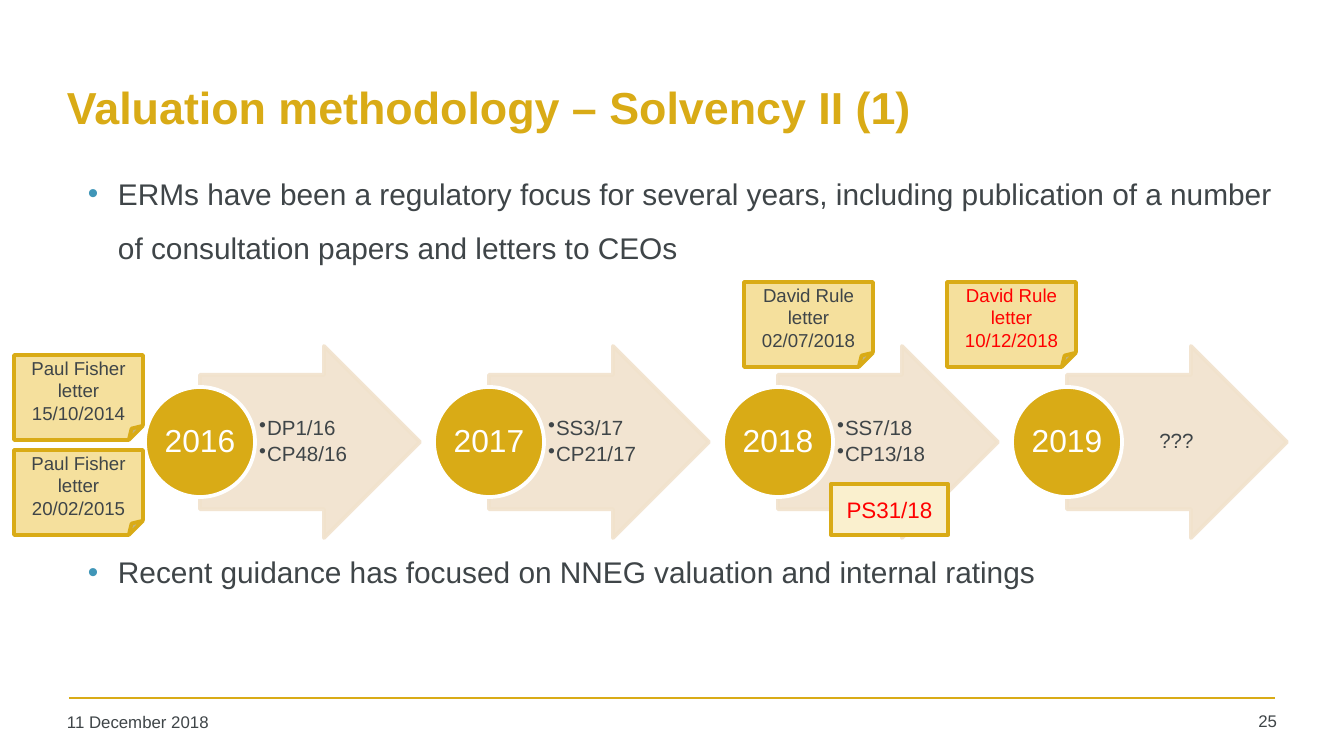
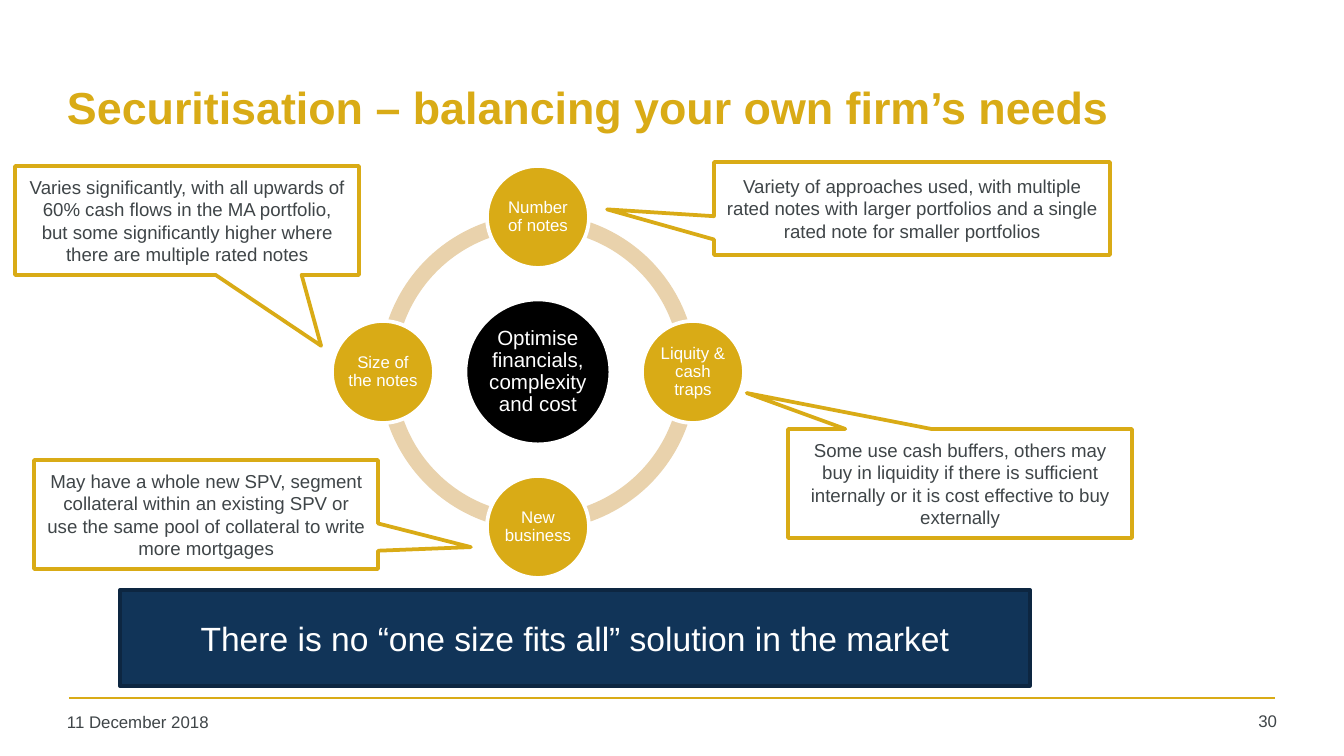
from lxml import etree
from pptx import Presentation
from pptx.dml.color import RGBColor
from pptx.enum.shapes import MSO_CONNECTOR as Line, MSO_SHAPE as Geo
from pptx.enum.text import MSO_ANCHOR as Anchor, MSO_AUTO_SIZE as Auto, PP_ALIGN as Align
from pptx.oxml.ns import qn
from pptx.util import Emu, Pt

# Shared look
SCALE = 914400 / 134.4
FONT = "Arial"
GOLD, INK, WHITE, RED = "D9AB16", "3F4548", "FFFFFF", "FF0000"
BLUE, NOTE, CREAM, SAND, TAN = "4096B8", "F5E09D", "FAF0CE", "F1E2CC", "E9D2AC"
NAVY, DEEP, BLACK = "113458", "0D2641", "000000"
DATE = "11 December 2018"
TIGHT, FRAME, ROOMY = (1, 1, 1, 1), (9, 5, 9, 5), (13, 7, 13, 7)

# Slide 1 content
FOCUS = {
    "title": "Valuation methodology – Solvency II (1)",
    "page": "25",
    "points": [
        "ERMs have been a regulatory focus for several years, including publication "
        "of a number of consultation papers and letters to CEOs",
        "Recent guidance has focused on NNEG valuation and internal ratings",
    ],
    "years": [
        ("2016", ["DP1/16", "CP48/16"]),
        ("2017", ["SS3/17", "CP21/17"]),
        ("2018", ["SS7/18", "CP13/18"]),
        ("2019", ["???"]),
    ],
    "notes": [
        (14, 450, ["Paul Fisher letter 20/02/2015"], INK),
        (744, 282, ["David Rule letter", "02/07/2018"], INK),
        (14, 355, ["Paul Fisher letter 15/10/2014"], INK),
        (947, 282, ["David Rule letter", "10/12/2018"], RED),
    ],
    "paper": "PS31/18",
}

# Slide 2 content: nodes run clockwise from the top
NEEDS = {
    "title": "Securitisation – balancing your own firm’s needs",
    "page": "30",
    "hub": "Optimise financials, complexity and cost",
    "nodes": [
        ("Number of notes", 0, -1),
        ("Liquity & cash traps", 1, 0),
        ("New business", 0, 1),
        ("Size of the notes", -1, 0),
    ],
    "calls": [
        ((714, 162, 396, 93), (-0.77, 0.01),
         "Variety of approaches used, with multiple rated notes with larger portfolios "
         "and a single rated note for smaller portfolios"),
        ((15, 166, 344, 109), (0.39, 1.15),
         "Varies significantly, with all upwards of 60% cash flows in the MA portfolio, "
         "but some significantly higher where there are multiple rated notes"),
        ((788, 429, 344, 109), (-0.62, -0.83),
         "Some use cash buffers, others may buy in liquidity if there is sufficient "
         "internally or it is cost effective to buy externally"),
        ((34, 460, 344, 109), (0.77, 0.3),
         "May have a whole new SPV, segment collateral within an existing SPV or use "
         "the same pool of collateral to write more mortgages"),
    ],
    "moral": "There is no “one size fits all” solution in the market",
}


# Helpers
def px(n):
    return Emu(round(n * SCALE))


def rgb(code):
    return RGBColor.from_string(code)


def place(shape, box):
    shape.left, shape.top, shape.width, shape.height = map(px, box)


def bullet(para, hang, color):
    props = para._p.get_or_add_pPr()
    props.set("marL", str(px(hang)))
    props.set("indent", str(-px(hang)))
    tint = etree.SubElement(props, qn("a:buClr"))
    etree.SubElement(tint, qn("a:srgbClr"), val=color)
    etree.SubElement(props, qn("a:buChar"), char="•")


def write(shape, text, size=10, color=INK, bold=False, align=Align.CENTER,
          anchor=Anchor.MIDDLE, ins=ROOMY, lead=1.0, gap=0, hang=0, dot=INK):
    frame = shape.text_frame
    frame.word_wrap, frame.auto_size = True, Auto.NONE
    frame.vertical_anchor = anchor
    (frame.margin_left, frame.margin_top,
     frame.margin_right, frame.margin_bottom) = map(px, ins)
    for i, words in enumerate([text] if isinstance(text, str) else text):
        para = frame.add_paragraph() if i else frame.paragraphs[0]
        if hang:
            bullet(para, hang, dot)
        para.alignment, para.line_spacing = align, lead
        para.space_before, para.space_after = Pt(gap if i else 0), Pt(0)
        run = para.add_run()
        run.text = words
        font = run.font
        font.name, font.size, font.bold = FONT, Pt(size), bold
        font.color.rgb = rgb(color)


def label(slide, box, text, **fmt):
    write(slide.shapes.add_textbox(*map(px, box)), text, **fmt)


def fade(fill, share):
    for tint in fill.iter(qn("a:srgbClr")):
        etree.SubElement(tint, qn("a:alpha"), val=str(share * 1000))


def draw(slide, geo, box, fill, line=None, adj=(), text=None, **fmt):
    shape = slide.shapes.add_shape(geo, *map(px, box))
    shape.shadow.inherit = False
    shape.fill.solid()
    shape.fill.fore_color.rgb = rgb(fill)
    if line:
        shape.line.color.rgb = rgb(line)
        shape.line.width = Pt(2)
    else:
        shape.line.fill.background()
    for i, value in enumerate(adj):
        shape.adjustments[i] = value
    if text:
        write(shape, text, **fmt)
    return shape


def disc(slide, x, y, width, fill, text, **fmt):
    box = (x - width / 2, y - width / 2, width, width)
    draw(slide, Geo.OVAL, box, fill, WHITE, text=text,
         color=WHITE, ins=TIGHT, lead=0.9, **fmt)


def start(deck, layout, data):
    """Add a slide with its title, footer rule, date and page number."""
    slide = deck.slides.add_slide(deck.slide_layouts[layout])
    rule = slide.shapes.add_connector(Line.STRAIGHT, px(69), px(698), px(1275), px(698))
    rule.line.color.rgb, rule.line.width = rgb(GOLD), Pt(1)
    etree.SubElement(rule._element.spPr, qn("a:effectLst"))
    title = slide.shapes.title
    place(title, (58, 44, 1219, 126))
    write(title, data["title"], size=24, color=GOLD, bold=True, align=Align.LEFT, ins=FRAME)
    foot = {"size": 9, "anchor": Anchor.TOP, "ins": FRAME}
    label(slide, (58, 707, 296, 36), DATE, align=Align.LEFT, **foot)
    label(slide, (1191, 706, 95, 37), data["page"], align=Align.RIGHT, **foot)
    return slide


# Slide 1: timeline of publications
def focus(deck):
    slide = start(deck, 1, FOCUS)
    body = slide.placeholders[1]
    place(body, (79, 153, 1206, 500))
    write(body, FOCUS["points"], size=16, align=Align.LEFT, anchor=Anchor.TOP,
          ins=FRAME, lead=1.5, gap=145, hang=30, dot=BLUE)
    for i, (year, papers) in enumerate(FOCUS["years"]):
        x, mid = 200 + 289 * i, 442
        arrow = draw(slide, Geo.RIGHT_ARROW, (x, mid - 96, 220, 192), SAND, SAND, (0.7, 0.5))
        fade(arrow._element.spPr, 90)
        many = len(papers) > 1
        label(slide, (x + 55, mid - 67, 108, 134), papers, size=11, ins=(4, 1, 3, 1),
              lead=0.9, gap=2, hang=8 if many else 0,
              align=Align.LEFT if many else Align.CENTER)
        disc(slide, x, mid, 110, GOLD, year, size=17)
    for x, y, text, color in FOCUS["notes"]:
        draw(slide, Geo.FOLDED_CORNER, (x, y, 129, 85), NOTE, GOLD, text=text, color=color)
    draw(slide, Geo.RECTANGLE, (831, 484, 117, 51), CREAM, GOLD,
         text=FOCUS["paper"], size=12, color=RED)


# Slide 2: ring of needs with callouts
def needs(deck):
    slide = start(deck, 5, NEEDS)
    x, y, ring, reach, turn = 538, 372, 317, 155, 54
    for i in range(4):
        draw(slide, Geo.BLOCK_ARC, (x - ring / 2, y - ring / 2, ring, ring), TAN,
             adj=(turn * i, turn * ((i + 1) % 4), 0.05))
    disc(slide, x, y, 145, BLACK, NEEDS["hub"], size=11)
    for text, dx, dy in NEEDS["nodes"]:
        disc(slide, x + reach * dx, y + reach * dy, 102, GOLD, text, size=9)
    for box, tip, text in NEEDS["calls"]:
        draw(slide, Geo.RECTANGULAR_CALLOUT, box, WHITE, GOLD, tip, text)
    draw(slide, Geo.RECTANGLE, (120, 590, 910, 96), NAVY, DEEP,
         text=NEEDS["moral"], size=18, color=WHITE)


def main():
    deck = Presentation()
    deck.slide_width, deck.slide_height = px(1344), px(756)
    focus(deck)
    needs(deck)
    deck.save("out.pptx")


if __name__ == "__main__":
    main()
